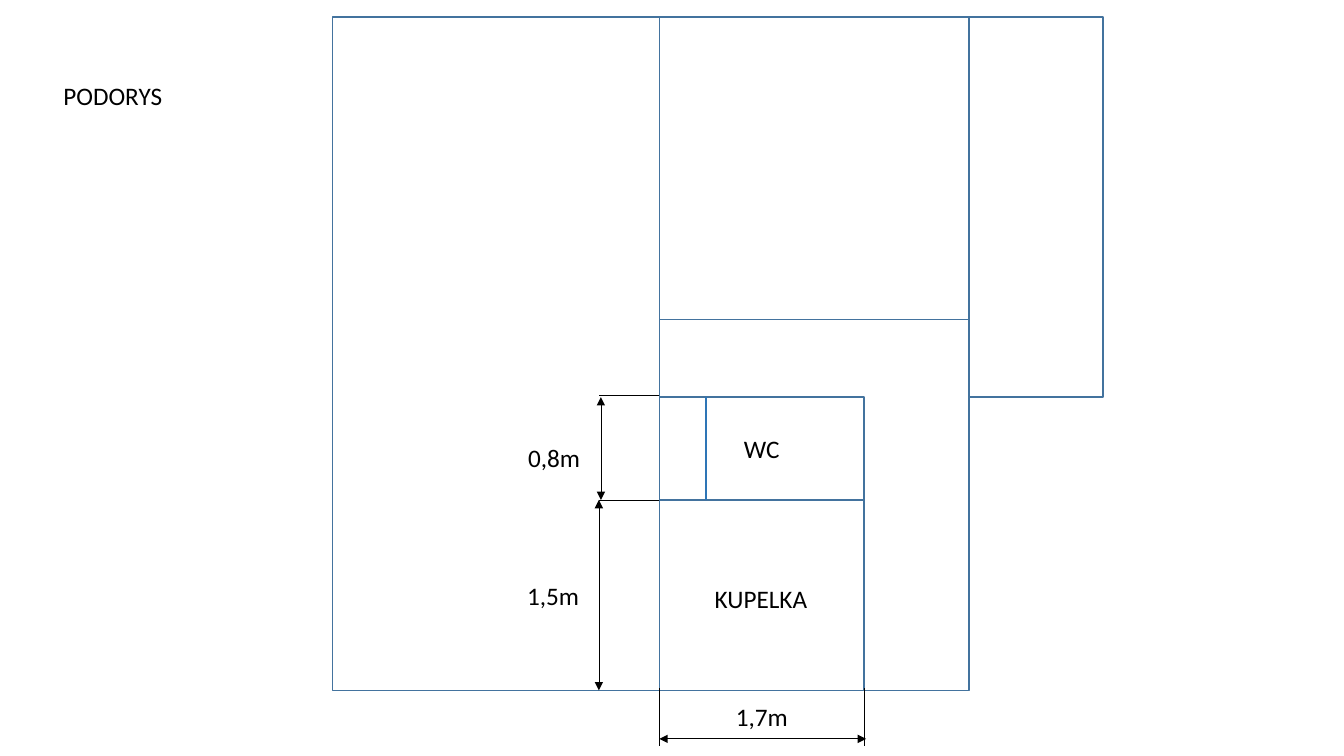
from lxml import etree
from pptx import Presentation
from pptx.dml.color import RGBColor
from pptx.enum.shapes import MSO_CONNECTOR, MSO_SHAPE
from pptx.enum.text import MSO_ANCHOR, MSO_AUTO_SIZE, PP_ALIGN
from pptx.oxml.ns import qn
from pptx.util import Inches, Pt

RECTANGLE = MSO_SHAPE.RECTANGLE
STRAIGHT = MSO_CONNECTOR.STRAIGHT
LEFT, CENTER = PP_ALIGN.LEFT, PP_ALIGN.CENTER
MIDDLE = MSO_ANCHOR.MIDDLE
GROW = MSO_AUTO_SIZE.SHAPE_TO_FIT_TEXT
WHITE, BLACK, WALL, PARTITION = "FFFFFF", "000000", "43739E", "2E75B6"
LABEL_HEIGHT = 0.4


def color(hex_code):
    """Return the colour for a hex string."""
    return RGBColor.from_string(hex_code)


def write(frame, text, size=18, font="Calibri", ink=BLACK, align=LEFT):
    """Put formatted text into a text frame."""
    paragraph = frame.paragraphs[0]
    paragraph.alignment = align
    run = paragraph.add_run()
    run.text = text
    run.font.size = Pt(size)
    run.font.name = font
    run.font.color.rgb = color(ink)


def add_label(slide, text, left, top, width):
    """Place a free label that does not wrap."""
    label = slide.shapes.add_textbox(
        Inches(left), Inches(top), Inches(width), Inches(LABEL_HEIGHT))
    label.text_frame.word_wrap = False
    label.text_frame.auto_size = GROW
    write(label.text_frame, text)


def add_room(slide, left, top, right, bottom, name=None):
    """Draw a room between its four walls, with an optional centred name."""
    room = slide.shapes.add_shape(
        RECTANGLE, Inches(left), Inches(top), Inches(right - left), Inches(bottom - top))
    room.shadow.inherit = False
    room.fill.solid()
    room.fill.fore_color.rgb = color(WHITE)
    room.line.color.rgb = color(WALL)
    room.line.width = Pt(1)
    if name:
        room.text_frame.vertical_anchor = MIDDLE
        write(room.text_frame, name, align=CENTER)


def add_line(slide, start, end, ink=BLACK, weight=0.5, arrows=False):
    """Draw a straight line, with arrowheads at both ends if asked."""
    line = slide.shapes.add_connector(STRAIGHT, *map(Inches, start + end))
    line.line.color.rgb = color(ink)
    line.line.width = Pt(weight)
    if arrows:
        outline = line.line._get_or_add_ln()
        for tag in ("a:headEnd", "a:tailEnd"):
            etree.SubElement(outline, qn(tag), type="triangle")
    etree.SubElement(line._element.spPr, qn("a:effectLst"))


def add_floor_plan(slide, left, top, width, height):
    """Draw the rooms inside the given box."""
    right, bottom = left + width, top + height
    core_left, core_right = left + 3.24, left + 6.31
    hall_top, wc_top, bath_top = top + 3, top + 3.77, top + 4.79
    bath_right = core_left + 2.03
    shaft_right = core_left + 0.46

    add_room(slide, core_left, hall_top, core_right, bottom)
    add_room(slide, core_left, bath_top, bath_right, bottom)
    add_room(slide, core_left, wc_top, bath_right, bath_top, "WC")
    add_room(slide, core_right, top, right, wc_top)
    add_room(slide, core_left, top, core_right, hall_top)
    add_room(slide, left, top, core_left, bottom)
    add_label(slide, "KUPELKA", core_left + 0.45, bath_top + 0.78, 1.13)
    add_line(slide, (shaft_right, wc_top), (shaft_right, bath_top), PARTITION, 1.5)


def add_side_dimensions(slide, left, top, width, height):
    """Dimension the WC and the bathroom along their left wall."""
    right, bottom = left + width, top + height
    bath_top = top + 1.02
    for level in (bath_top, top - 0.02):
        add_line(slide, (right, level), (left, level))
    add_line(slide, (left, bath_top), (left, bottom), arrows=True)
    add_line(slide, (left + 0.02, top), (left + 0.02, bath_top), arrows=True)
    add_label(slide, "1,5m", left - 0.81, bath_top + 0.75, 0.72)
    add_label(slide, "0,8m", left - 0.8, top + 0.4, 0.72)


def add_bottom_dimension(slide, left, top, width, height):
    """Dimension the bathroom width below its lower wall."""
    right, bottom = left + width, top + height
    level = bottom - 0.07
    add_line(slide, (left, level), (right + 0.02, level), arrows=True)
    for edge in (left, right):
        add_line(slide, (edge, top), (edge, bottom))
    add_label(slide, "1,7m", left + 0.66, top + 0.08, 0.72)


def main():
    """Build the floor plan slide and save it."""
    presentation = Presentation()
    presentation.slide_width = Inches(13.33)
    presentation.slide_height = Inches(7.5)
    slide = presentation.slides.add_slide(presentation.slide_layouts[6])
    add_floor_plan(slide, 3.3, 0.17, 7.64, 6.68)
    add_label(slide, "PODORYS", 0.53, 0.75, 1.19)
    add_side_dimensions(slide, 5.94, 3.94, 0.6, 2.91)
    add_bottom_dimension(slide, 6.54, 6.83, 2.03, 0.57)
    presentation.save("out.pptx")


if __name__ == "__main__":
    main()
